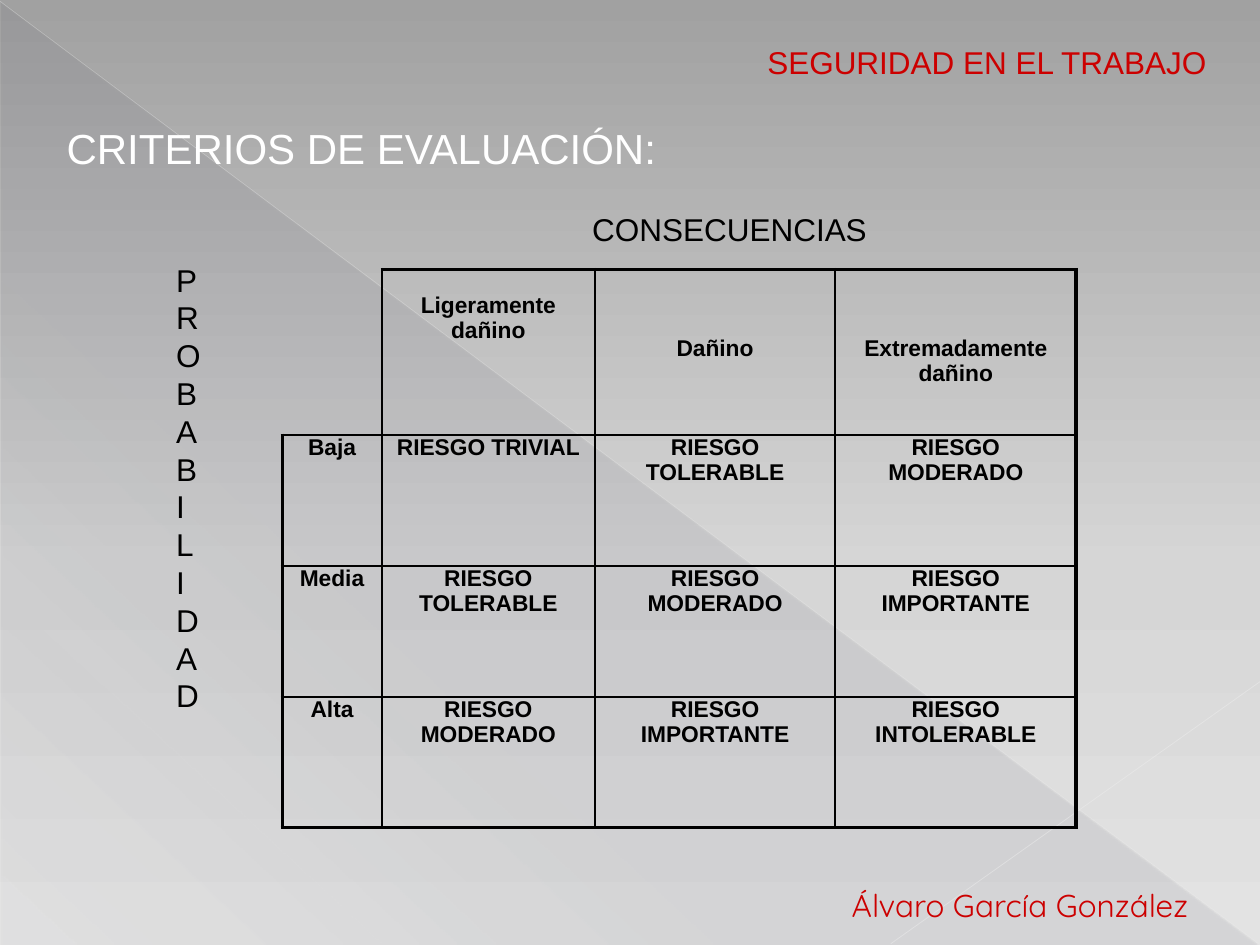
from lxml import etree
from pptx import Presentation, util as u
from pptx.dml.color import RGBColor
from pptx.enum import shapes, text
from pptx.oxml.ns import qn

COLORS = {
    "ink": "000000", "accent": "CC0000", "title": "FFFFFF", "veil": "424456",
    "sky": "A1A1A1", "mist": "D6D6D6", "floor": "E3E3E3",
    "diagonal": "EEEEEE", "corner": "EFEFEF",
}
CELL = u.Inches(0.1)  # the slide is a grid of 100 columns by 75 rows
THIN, THICK = 1.5, 2.25


def grid(*lengths):
    return [round(length * CELL) for length in lengths]


def add_color(parent, color, opacity=100):
    tint = etree.SubElement(parent, qn("a:srgbClr"), val=COLORS[color])
    if opacity < 100:
        etree.SubElement(tint, qn("a:alpha"), val=str(opacity * 1000))


class RiskSlide:
    font = "Arial"

    def __init__(self, deck):
        self.slide = deck.slides.add_slide(deck.slide_layouts[6])

    def gradient(self, fill, owner, angle, stops):
        """Fill with (position, color, opacity) stops, angle clockwise."""
        fill.gradient()
        gradient = owner.find(".//" + qn("a:gradFill"))
        stop_list = gradient.find(qn("a:gsLst"))
        for default in list(stop_list):
            stop_list.remove(default)
        for position, color, opacity in stops:
            stop = etree.SubElement(stop_list, qn("a:gs"), pos=str(position * 1000))
            add_color(stop, color, opacity)
        gradient.find(qn("a:lin")).set("ang", str(angle * 60000))

    def background(self, angle, stops):
        self.gradient(self.slide.background.fill, self.slide.element, angle, stops)

    def triangle(self, box, angle, stops):
        veil = self.slide.shapes.add_shape(
            shapes.MSO_SHAPE.RIGHT_TRIANGLE, *grid(*box))
        veil.shadow.inherit = False
        veil.line.fill.background()
        self.gradient(veil.fill, veil.element.spPr, angle, stops)

    def line(self, ends, color, width, opacity):
        ray = self.slide.shapes.add_connector(
            shapes.MSO_CONNECTOR.STRAIGHT, *grid(*ends))
        ray.line.width = u.Pt(width)
        ray.line.color.rgb = RGBColor.from_string(COLORS[color])
        properties = ray.element.spPr
        tint = properties.find(".//" + qn("a:srgbClr"))
        etree.SubElement(tint, qn("a:alpha"), val=str(opacity * 1000))
        etree.SubElement(properties, qn("a:effectLst"))

    def add_words(self, paragraph, words, size, color="ink", font=None, bold=False):
        run = paragraph.add_run()
        run.text = words
        run.font.name = font or self.font
        run.font.size = u.Pt(size)
        run.font.bold = bold
        run.font.color.rgb = RGBColor.from_string(COLORS[color])

    def label(self, box, lines, color="ink", size=18, font=None, indent=0):
        frame = self.slide.shapes.add_textbox(*grid(*box)).text_frame
        frame.word_wrap = True
        frame.margin_left += grid(indent)[0]
        for number, words in enumerate(lines):
            paragraph = frame.add_paragraph() if number else frame.paragraphs[0]
            self.add_words(paragraph, words, size, color, font)

    def borders(self, cell, weights):
        """Set left, right, top and bottom weights; 0 means no line."""
        properties = cell._tc.get_or_add_tcPr()
        for place, (side, weight) in enumerate(zip("LRTB", weights)):
            edge = etree.Element(qn("a:ln" + side), w=str(u.Pt(weight)))
            if weight:
                add_color(etree.SubElement(edge, qn("a:solidFill")), "ink")
            else:
                etree.SubElement(edge, qn("a:noFill"))
            properties.insert(place, edge)

    def matrix(self, corner, widths, heights, rows, header_drops):
        table = self.slide.shapes.add_table(
            len(rows), len(widths), *grid(*corner, sum(widths), sum(heights))).table
        table.first_row = table.horz_banding = False
        for column, width in zip(table.columns, grid(*widths)):
            column.width = width
        for row, height in zip(table.rows, grid(*heights)):
            row.height = height
        last_row, last_column = len(rows) - 1, len(widths) - 1
        for r, row in enumerate(rows):
            for c, words in enumerate(row):
                cell = table.cell(r, c)
                cell.fill.background()
                cell.margin_left = cell.margin_right = u.Inches(0.05)
                cell.margin_top = grid(0 if r else header_drops[c])[0]
                cell.margin_bottom = 0
                blank = r == c == 0
                outer = 0 if blank else THICK
                self.borders(cell, (
                    THIN if c else outer,
                    THICK if c == last_column else THIN,
                    THIN if r else outer,
                    THICK if r == last_row else THIN))
                if not blank:
                    paragraph = cell.text_frame.paragraphs[0]
                    paragraph.alignment = text.PP_ALIGN.CENTER
                    self.add_words(paragraph, words, 13, bold=True)


def main():
    deck = Presentation()
    deck.slide_width, deck.slide_height = grid(100, 75)
    page = RiskSlide(deck)

    page.background(90, [(0, "sky", 100), (60, "mist", 100), (100, "floor", 100)])
    page.triangle((0.1, 0.2, 99.8, 74.8), 133,
                  [(0, "veil", 10), (70, "veil", 8), (100, "veil", 1)])
    page.line((0, 0.1, 99.9, 74.9), "diagonal", 0.39, 35)
    page.line((100, 54.1, 70.7, 74.9), "corner", 0.47, 45)

    page.label((57.9, 2.9, 39.4, 4), ["SEGURIDAD EN EL TRABAJO"], "accent", indent=2)
    page.label((62.6, 69.8, 35.4, 4), ["Álvaro García González"], "accent",
               font="Quicksand", indent=4)
    page.label((4.3, 9.2, 88.2, 5), ["CRITERIOS DE EVALUACIÓN:"], "title", size=24)

    levels = ["TRIVIAL", "TOLERABLE", "MODERADO", "IMPORTANTE", "INTOLERABLE"]
    harms = ["", "Ligeramente dañino", "Dañino", "Extremadamente dañino"]
    odds = ["Baja", "Media", "Alta"]
    # each step in probability or harm raises the risk by one level
    risks = [[odd] + ["RIESGO " + level for level in levels[step:step + 3]]
             for step, odd in enumerate(odds)]
    page.matrix((22.4, 21.4), (7.9, 16.9, 19.1, 19.1), (13.1, 10.4, 10.4, 10.4),
                [harms] + risks, header_drops=(0, 1.85, 5.25, 5.25))

    page.label((39.8, 16.2, 44.9, 4), ["CONSECUENCIAS"], indent=6.2)
    page.label((13, 20.2, 5.5, 37.4), "PROBABILIDAD")
    deck.save("out.pptx")


if __name__ == "__main__":
    main()
